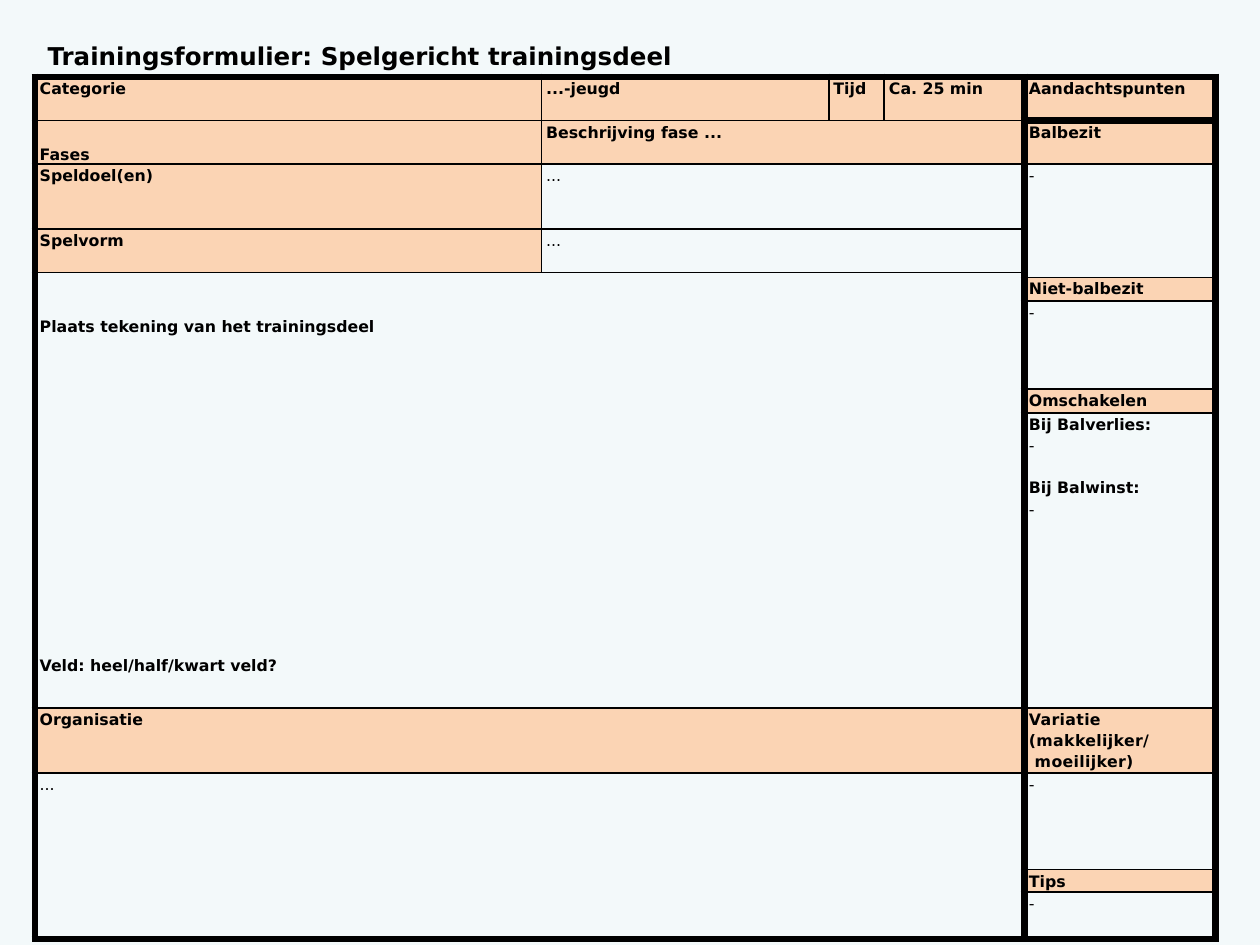
from lxml import etree
from pptx import Presentation
from pptx.dml.color import RGBColor
from pptx.enum import text
from pptx.oxml.ns import qn
from pptx.util import Pt

FONT = "DejaVu Sans"
PEACH, BLACK, PAPER = "FBD4B4", "000000", "F3F9FA"
THIN, THICK = 1, 4.5
NO_STYLE = "{2D5ABB26-0587-4C30-8999-92F81FD0307C}"


def write(p, words, size=9, bold=True, line=1.15, before=0, spacing=0):
    p.alignment = text.PP_ALIGN.LEFT
    p.line_spacing = line
    p.space_before = Pt(before)
    r = p.add_run()
    r.text = words
    r.font.name, r.font.size, r.font.bold = FONT, Pt(size), bold
    r.font.color.rgb = RGBColor.from_string(BLACK)
    if spacing:
        r.font._element.set("spc", str(int(spacing * 100)))


def set_borders(cell, **widths):
    """Draw black cell edges; keys are L, R, T and B, in that order."""
    tc_pr = cell._tc.get_or_add_tcPr()
    for i, (side, width) in enumerate(widths.items()):
        ln = etree.Element(qn(f"a:ln{side}"), w=str(int(Pt(width))))
        fill = etree.SubElement(ln, qn("a:solidFill"))
        etree.SubElement(fill, qn("a:srgbClr"), val=BLACK)
        tc_pr.insert(i, ln)


prs = Presentation()
prs.slide_width, prs.slide_height = Pt(720), Pt(540)
s = prs.slides.add_slide(prs.slide_layouts[5])
s.background.fill.solid()
s.background.fill.fore_color.rgb = RGBColor.from_string(PAPER)

title = s.shapes.title
title.left, title.top, title.width, title.height = Pt(20), Pt(20), Pt(584), Pt(24.5)
title.text_frame.vertical_anchor = text.MSO_ANCHOR.TOP
write(title.text_frame.paragraphs[0], "Trainingsformulier: Spelgericht trainingsdeel",
      size=14, line=1.0)

col_widths = [289.4, 164.2, 31.7, 80, 109.3]
row_heights = [25, 24.8, 37.1, 24.9, 2.8, 13.5, 50.3, 13.7, 168.6, 37.2, 55.3, 12.7, 26.9]
last_row = len(row_heights) - 1
frame = s.shapes.add_table(len(row_heights), len(col_widths), Pt(20), Pt(44),
                           Pt(sum(col_widths)), Pt(sum(row_heights)))
table = frame.table
table.first_row = table.horz_banding = False
table._tbl.tblPr.find(qn("a:tableStyleId")).text = NO_STYLE
for column, width in zip(table.columns, col_widths):
    column.width = Pt(width)
for row, height in zip(table.rows, row_heights):
    row.height = Pt(height)

# row, column, row span, column span, paragraphs
headings = [
    (0, 0, 1, 1, ["Categorie"]),
    (0, 1, 1, 1, ["...-jeugd"]),
    (0, 2, 1, 1, ["Tijd"]),
    (0, 3, 1, 1, ["Ca. 25 min"]),
    (0, 4, 1, 1, ["Aandachtspunten"]),
    (1, 0, 1, 1, ["Fases"]),
    (1, 1, 1, 3, ["Beschrijving fase ..."]),
    (1, 4, 1, 1, ["Balbezit"]),
    (2, 0, 1, 1, ["Speldoel(en)"]),
    (3, 0, 1, 1, ["Spelvorm"]),
    (5, 4, 1, 1, ["Niet-balbezit"]),
    (7, 4, 1, 1, ["Omschakelen"]),
    (9, 0, 1, 4, ["Organisatie"]),
    (9, 4, 1, 1, ["Variatie (makkelijker/", " moeilijker)"]),
    (11, 4, 1, 1, ["Tips"]),
]
entries = [
    (2, 1, 1, 3, ["..."]),
    (2, 4, 3, 1, ["-"]),
    (3, 1, 1, 3, ["..."]),
    (4, 0, 5, 4, ["Plaats tekening van het trainingsdeel", "Veld: heel/half/kwart veld?"]),
    (6, 4, 1, 1, ["-"]),
    (8, 4, 1, 1, ["Bij Balverlies:", "-", "Bij Balwinst:", "-"]),
    (10, 0, 3, 4, ["..."]),
    (10, 4, 1, 1, ["-"]),
    (12, 4, 1, 1, ["-"]),
]
space_before = {"Veld: heel/half/kwart veld?": 181.6, "Bij Balwinst:": 12}

for block in headings + entries:
    row, col, row_span, col_span, lines = block
    end_row, end_col = row + row_span - 1, col + col_span - 1
    cell = table.cell(row, col)
    if row_span * col_span > 1:
        cell.merge(table.cell(end_row, end_col))
    cell.margin_left = cell.margin_right = Pt(2.7)
    cell.margin_top = cell.margin_bottom = 0
    if block in headings:
        cell.fill.solid()
        cell.fill.fore_color.rgb = RGBColor.from_string(PEACH)
    else:
        cell.fill.background()
    set_borders(cell,
                L=THICK if col in (0, 4) else THIN,
                R=THICK if end_col in (3, 4) else THIN,
                T=THICK if row == 0 or (row, col) == (1, 4) else THIN,
                B=THICK if end_row == last_row or (row, col) == (0, 4) else THIN)
    tf = cell.text_frame
    for i, words in enumerate(lines):
        p = tf.add_paragraph() if i else tf.paragraphs[0]
        write(p, words, bold=words not in ("-", "..."),
              before=space_before.get(words, 0),
              spacing=0.2 if lines[0].startswith("Variatie") else 0)

table.cell(1, 0).vertical_anchor = text.MSO_ANCHOR.BOTTOM
table.cell(4, 0).margin_top = Pt(24.1)

prs.save("out.pptx")
